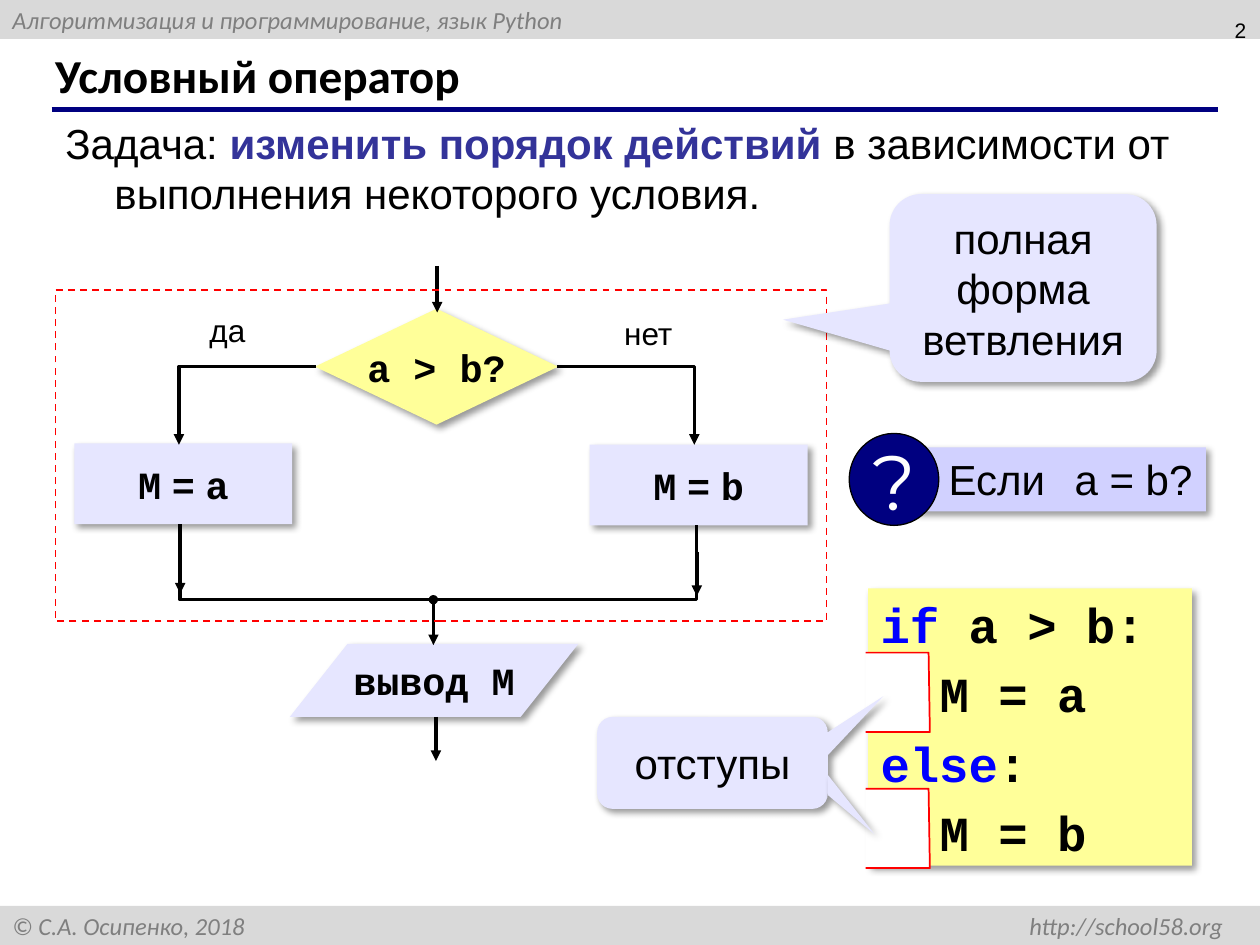
import pptx
import pptx.util
import pptx.dml.color
import pptx.enum.dml
import pptx.enum.shapes
import pptx.enum.text
import pptx.oxml
import pptx.oxml.ns

PX = 9144
KIND = pptx.enum.shapes.MSO_SHAPE
ALIGN = pptx.enum.text.PP_ALIGN
ANCHOR = pptx.enum.text.MSO_ANCHOR
DASH = pptx.enum.dml.MSO_LINE.DASH

THEME = {
    "colors": {
        "black": "000000", "white": "FFFFFF", "band": "D9D9D9", "gray": "7F7F7F",
        "navy": "000080", "accent": "333399", "lilac": "E6E6FF", "question": "D1D1FF",
        "yellow": "FFFF99", "keyword": "0000FF", "red": "FF0000",
    },
    "text": {
        "band": ("gray", {"name": "Calibri", "size": 14, "italic": True}),
        "title": ("black", {"name": "Calibri", "size": 27, "bold": True}),
        "number": ("black", {"name": "Arial", "size": 12}),
        "body": ("black", {"name": "Arial", "size": 24}),
        "strong": ("accent", {"name": "Arial", "size": 24, "bold": True}),
        "label": ("black", {"name": "Arial", "size": 18}),
        "node": ("black", {"name": "Courier New", "size": 22, "bold": True}),
        "gap": ("black", {"name": "Arial", "size": 22, "bold": True}),
        "code": ("black", {"name": "Courier New", "size": 28, "bold": True}),
        "keyword": ("keyword", {"name": "Courier New", "size": 28, "bold": True}),
        "mark": ("white", {"name": "Montserrat", "size": 44}),
    },
}

LEFT = {"alignment": ALIGN.LEFT}
CENTER = {"alignment": ALIGN.CENTER}
RIGHT = {"alignment": ALIGN.RIGHT}
CODE = {"alignment": ALIGN.LEFT, "space_before": pptx.util.Pt(6)}
TOP = {"word_wrap": True, "vertical_anchor": ANCHOR.TOP}
MIDDLE = {"word_wrap": True, "vertical_anchor": ANCHOR.MIDDLE}
NOWRAP = {"word_wrap": False, "vertical_anchor": ANCHOR.MIDDLE}

HEADINGS = [
    ((34, 33, 916, 52), [("Условный оператор", "title")], LEFT, MIDDLE, {}),
    ((766, -2, 233, 52), [("2", "number")], RIGHT, MIDDLE, {}),
    ((42, 88, 925, 91), [("Задача: ", "body"), ("изменить порядок действий", "strong"),
                         (" в зависимости от выполнения некоторого условия.", "body")],
     LEFT, TOP, {"marL": 39, "indent": -39}),
]
BANDS = [
    (0, "Алгоритмизация и программирование, язык Python", None),
    (719, "© С.А. Осипенко, 2018\thttp://school58.org", (961, "r")),
]
NODES = [
    (KIND.RECTANGLE, (59, 352, 173, 64), "lilac", ["M", "=", "a"]),
    (KIND.FLOWCHART_DECISION, (250, 245, 193, 92), "yellow", ["a > b?"]),
    (KIND.RECTANGLE, (468, 353, 173, 64), "lilac", ["M", "=", "b"]),
    (KIND.FLOWCHART_DATA, (230, 511, 229, 58), "lilac", ["вывод M"]),
]
ARROWS = [(347, 211, 248), (346, 569, 604), (143, 436, 471), (553, 438, 473), (344, 477, 512)]
BRANCHES = [
    ([(442, 291), (551, 291), (551, 353)], True),
    ([(251, 291), (142, 291), (142, 353)], True),
    ([(143, 416), (143, 476), (553, 476), (553, 417)], False),
]
LABELS = [("да", 143, 242), ("нет", 477, 244)]
PROGRAM = [
    ([("if", "keyword"), (" a > b:", "code")], 0),
    ([("M = a", "code")], 47),
    ([("else", "keyword"), (":", "code")], 0),
    ([("M = b", "code")], 47),
]
CALLOUTS = [
    ((706, 154, 212, 149), (-0.899, 0.169, 0.167), "полная форма ветвления"),
    ((474, 569, 183, 73), (0.741, -0.725, 0.167), "отступы"),
]
INDENT_TOPS = [518, 626]

deck = pptx.Presentation()
deck.slide_width, deck.slide_height = 1000 * PX, 750 * PX
shapes = deck.slides.add_slide(deck.slide_layouts[6]).shapes


def color(name):
    return pptx.dml.color.RGBColor.from_string(THEME["colors"][name])


def assign(target, values):
    for attribute, value in values.items():
        setattr(target, attribute, value)


def child(parent, tag, **attributes):
    element = pptx.oxml.parse_xml(f"<a:{tag} {pptx.oxml.ns.nsdecls('a')}/>")
    for key, value in attributes.items():
        element.set(key, str(value))
    parent.append(element)
    return element


def paint(part, fill=None, line=None, width=1, shadow=False):
    if fill:
        part.fill.solid()
        part.fill.fore_color.rgb = color(fill)
    else:
        part.fill.background()
    if line:
        part.line.color.rgb = color(line)
        part.line.width = pptx.util.Pt(width)
    else:
        part.line.fill.background()
    part.shadow.inherit = False
    if shadow:
        effects = part._element.spPr.find(pptx.oxml.ns.qn("a:effectLst"))
        outer = child(effects, "outerShdw", blurRad=50800, dist=38100, dir=2700000,
                      algn="tl", rotWithShape=0)
        child(child(outer, "srgbClr", val=THEME["colors"]["black"]), "alpha", val=40000)
    return part


def preset(kind, at, **look):
    return paint(shapes.add_shape(kind, *(v * PX for v in at)), **look)


def outline(points, close=False, **look):
    builder = shapes.build_freeform(*points[0], scale=PX)
    builder.add_line_segments(points[1:], close=close)
    return paint(builder.convert_to_shape(), **look)


def add_runs(paragraph, runs, layout, indents=None, tab=None):
    assign(paragraph, layout)
    properties = paragraph._p.get_or_add_pPr()
    for key, value in (indents or {}).items():
        properties.set(key, str(value * PX))
    if tab:
        child(child(properties, "tabLst"), "tab", pos=tab[0] * PX, algn=tab[1])
    for text, style in runs:
        run = paragraph.add_run()
        run.text = text
        ink, values = THEME["text"][style]
        assign(run.font, {**values, "size": pptx.util.Pt(values["size"])})
        run.font.color.rgb = color(ink)


def write(part, runs, layout, frame, indents=None, tab=None):
    assign(part.text_frame, frame)
    add_runs(part.text_frame.paragraphs[0], runs, layout, indents, tab)


def textbox(at, *content):
    write(shapes.add_textbox(*(v * PX for v in at)), *content)


def segment(start, end, ink, width):
    line = shapes.add_connector(pptx.enum.shapes.MSO_CONNECTOR.STRAIGHT,
                                *(v * PX for v in start + end))
    line.line.color.rgb = color(ink)
    line.line.width = pptx.util.Pt(width)
    child(line._element.spPr, "effectLst")
    return line


def arrowhead(part):
    child(part.line._get_or_add_ln(), "tailEnd", type="triangle")


def callout(at, adjustments, text):
    bubble = preset(KIND.ROUNDED_RECTANGULAR_CALLOUT, at, fill="lilac", shadow=True)
    for index, value in enumerate(adjustments):
        bubble.adjustments[index] = value
    write(bubble, [(text, "body")], CENTER, MIDDLE)


for top, text, tab in BANDS:
    band = preset(KIND.RECTANGLE, (0, top, 1000, 31), fill="band")
    write(band, [(text, "band")], LEFT, MIDDLE, None, tab)
segment((41, 87), (967, 87), "navy", 3)
for heading in HEADINGS:
    textbox(*heading)

for kind, at, fill, words in NODES:
    runs = [(words[0], "node")]
    for word in words[1:]:
        runs += [(" ", "gap"), (word, "node")]
    write(preset(kind, at, fill=fill, shadow=True), runs, CENTER, NOWRAP)
for x, top, bottom in ARROWS:
    arrowhead(segment((x, top), (x, bottom), "black", 2))
for points, has_head in BRANCHES:
    branch = outline(points, line="black", width=2)
    if has_head:
        arrowhead(branch)
preset(KIND.OVAL, (341, 473, 6, 6), fill="black", line="black")
for text, x, y in LABELS:
    textbox((x, y, 75, 40), [(text, "label")], CENTER, TOP)
branching = preset(KIND.RECTANGLE, (44, 230, 612, 263), line="red")
branching.line.dash_style = DASH.DASH

callout(*CALLOUTS[0])
question = preset(KIND.RECTANGLE, (725, 355, 232, 51), fill="question", shadow=True)
write(question, [("Если\ta = b?", "body")], LEFT, TOP, {"marL": 18, "indent": 0}, (114, "l"))
badge = preset(KIND.OVAL, (674, 344, 71, 73), fill="navy", line="black", width=0.75)
write(badge, [("?", "mark")], CENTER, NOWRAP)

listing = preset(KIND.RECTANGLE, (689, 467, 257, 220), fill="yellow", shadow=True)
assign(listing.text_frame, TOP)
for index, (runs, margin) in enumerate(PROGRAM):
    frame = listing.text_frame
    paragraph = frame.add_paragraph() if index else frame.paragraphs[0]
    add_runs(paragraph, runs, CODE, {"marL": margin, "indent": 0})
for top in INDENT_TOPS:
    outline([(687, top), (737, top), (738, top + 63), (687, top + 63)], fill="white", line="red")
callout(*CALLOUTS[1])
outline([(657, 631), (694, 662), (657, 615)], close=True, fill="lilac", shadow=True)

deck.save("out.pptx")
